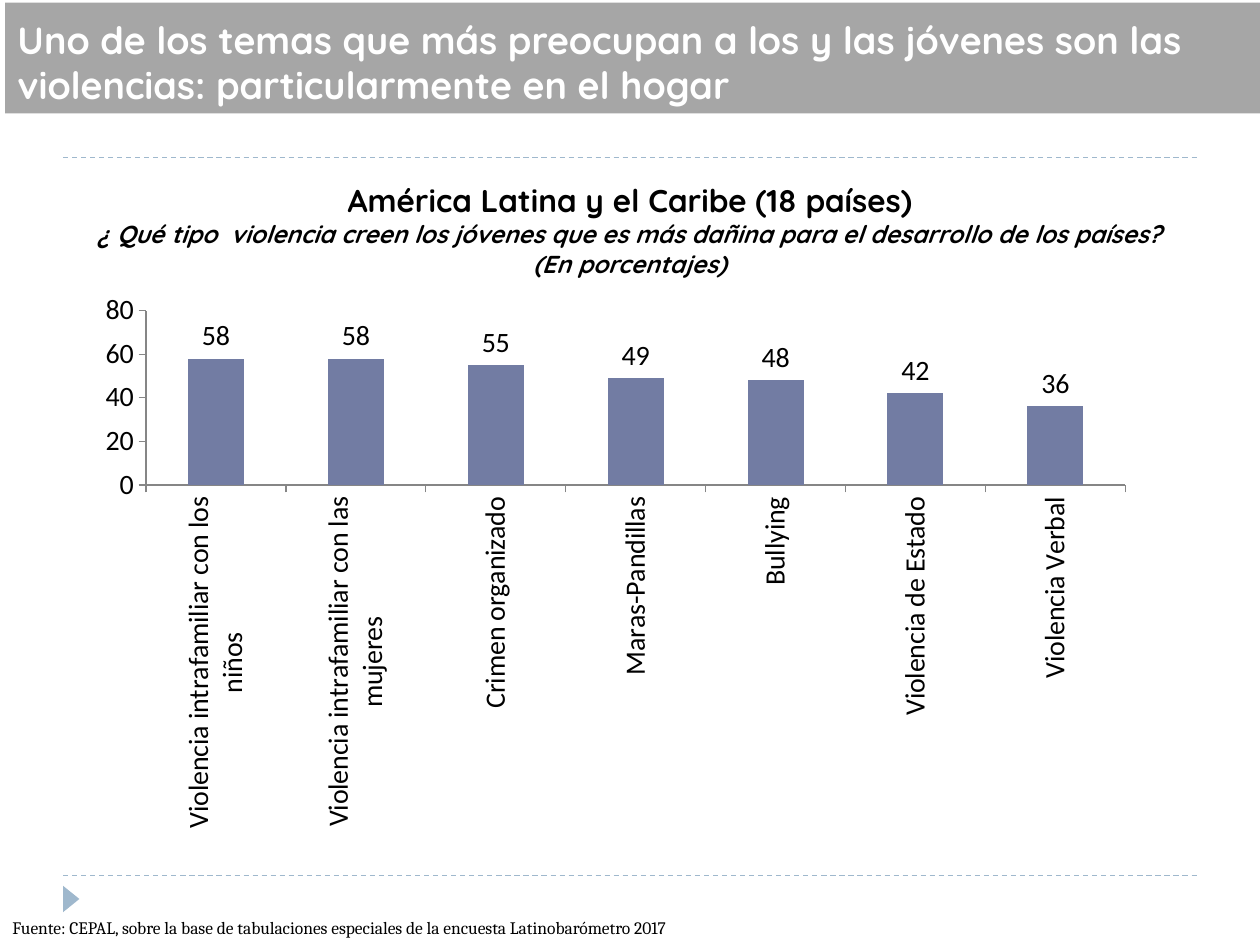
"""Build the slide on the kinds of violence that worry young people most."""
from lxml.etree import SubElement
from pptx import Presentation
from pptx.chart.data import CategoryChartData
from pptx.dml.color import RGBColor
from pptx.enum.chart import XL_CHART_TYPE, XL_LABEL_POSITION, XL_TICK_MARK
from pptx.enum.dml import MSO_LINE
from pptx.enum.shapes import MSO_CONNECTOR, MSO_SHAPE
from pptx.enum.text import MSO_ANCHOR, PP_ALIGN
from pptx.oxml.ns import qn
from pptx.util import Inches, Pt

COLORS = {name: RGBColor.from_string(value) for name, value in {
    "accent": "9FB8CD", "banner": "A6A6A6", "bar": "727CA3",
    "axis": "868686", "white": "FFFFFF", "black": "000000",
}.items()}


def add_filled_shape(kind, left, top, width, height, color):
    shape = slide.shapes.add_shape(
        kind, Inches(left), Inches(top), Inches(width), Inches(height))
    shape.shadow.inherit = False
    shape.fill.solid()
    shape.fill.fore_color.rgb = COLORS[color]
    shape.line.fill.background()
    return shape


def write_paragraph(paragraph, text, size, name, color, alignment, bold=False, italic=False):
    paragraph.text = text
    paragraph.alignment = alignment
    font = paragraph.font
    font.size, font.name = Pt(size), name
    font.bold, font.italic = bold, italic
    font.color.rgb = COLORS[color]


presentation = Presentation()
presentation.slide_width = Inches(10)
presentation.slide_height = Inches(7.5)
slide = presentation.slides.add_slide(presentation.slide_layouts[6])

for top in (6.95, 1.25):
    rule = slide.shapes.add_connector(
        MSO_CONNECTOR.STRAIGHT, Inches(0.5), Inches(top), Inches(9.5), Inches(top))
    rule.line.color.rgb = COLORS["accent"]
    rule.line.width = Pt(0.75)
    rule.line.dash_style = MSO_LINE.DASH
    SubElement(rule._element.spPr, qn("a:effectLst"))

marker = add_filled_shape(MSO_SHAPE.ISOSCELES_TRIANGLE, 0.46, 7.07, 0.21, 0.13, "accent")
marker.rotation = 90

banner = add_filled_shape(MSO_SHAPE.RECTANGLE, 0.04, 0.02, 9.96, 0.88, "banner")
banner.text_frame.word_wrap = True
banner.text_frame.vertical_anchor = MSO_ANCHOR.BOTTOM
write_paragraph(
    banner.text_frame.paragraphs[0],
    "Uno de los temas que más preocupan a los y las jóvenes son las violencias: "
    "particularmente en el hogar",
    21.6, "Quicksand", "white", PP_ALIGN.LEFT, bold=True)

chart_data = CategoryChartData(number_format="0")
chart_data.categories = [
    "Violencia intrafamiliar con los niños", "Violencia intrafamiliar con las mujeres",
    "Crimen organizado", "Maras-Pandillas", "Bullying", "Violencia de Estado",
    "Violencia Verbal",
]
chart_data.add_series("Series 1", (58, 58, 55, 49, 48, 42, 36))
chart = slide.shapes.add_chart(
    XL_CHART_TYPE.COLUMN_CLUSTERED, Inches(0.67), Inches(2.33), Inches(8.43), Inches(4.33),
    chart_data).chart
chart.has_legend = False
chart.has_title = False
chart.font.name = "Calibri"
chart.font.size = Pt(16)
chart.font.color.rgb = COLORS["black"]

for axis in (chart.category_axis, chart.value_axis):
    axis.has_major_gridlines = False
    axis.major_tick_mark = XL_TICK_MARK.OUTSIDE
    axis.minor_tick_mark = XL_TICK_MARK.NONE
    axis.format.line.color.rgb = COLORS["axis"]
    axis.format.line.width = Pt(0.75)
    axis.tick_labels.font.size = Pt(16)
chart.category_axis._element.txPr.bodyPr.set("rot", "-5400000")
chart.category_axis._element.txPr.bodyPr.set("vert", "horz")
chart.value_axis.minimum_scale = 0
chart.value_axis.maximum_scale = 80
chart.value_axis.major_unit = 20
chart.value_axis.tick_labels.number_format = "0"
chart.value_axis.tick_labels.number_format_is_linked = False

plot = chart.plots[0]
plot.gap_width = 150
plot.vary_by_categories = False
plot.series[0].format.fill.solid()
plot.series[0].format.fill.fore_color.rgb = COLORS["bar"]
labels = plot.series[0].data_labels
labels.show_value = True
labels.number_format = "0"
labels.number_format_is_linked = False
labels.position = XL_LABEL_POSITION.OUTSIDE_END

heading = slide.shapes.add_textbox(Inches(0), Inches(1.39), Inches(10), Inches(0.88)).text_frame
heading.word_wrap = True
heading_lines = [
    ("América Latina y el Caribe (18 países)", 18, False),
    ("¿ Qué tipo  violencia creen los jóvenes que es más dañina para el desarrollo "
     "de los países?", 14, True),
    ("(En porcentajes)", 14, True),
]
for index, (text, size, italic) in enumerate(heading_lines):
    paragraph = heading.add_paragraph() if index else heading.paragraphs[0]
    write_paragraph(paragraph, text, size, "Quicksand", "black", PP_ALIGN.CENTER, True, italic)

source = slide.shapes.add_textbox(Inches(0), Inches(7.23), Inches(9.82), Inches(0.27)).text_frame
source.word_wrap = True
source.vertical_anchor = MSO_ANCHOR.MIDDLE
write_paragraph(
    source.paragraphs[0],
    "Fuente: CEPAL, sobre la base de tabulaciones especiales de la encuesta "
    "Latinobarómetro 2017",
    10, "Cambria", "black", PP_ALIGN.JUSTIFY)

presentation.save("out.pptx")
